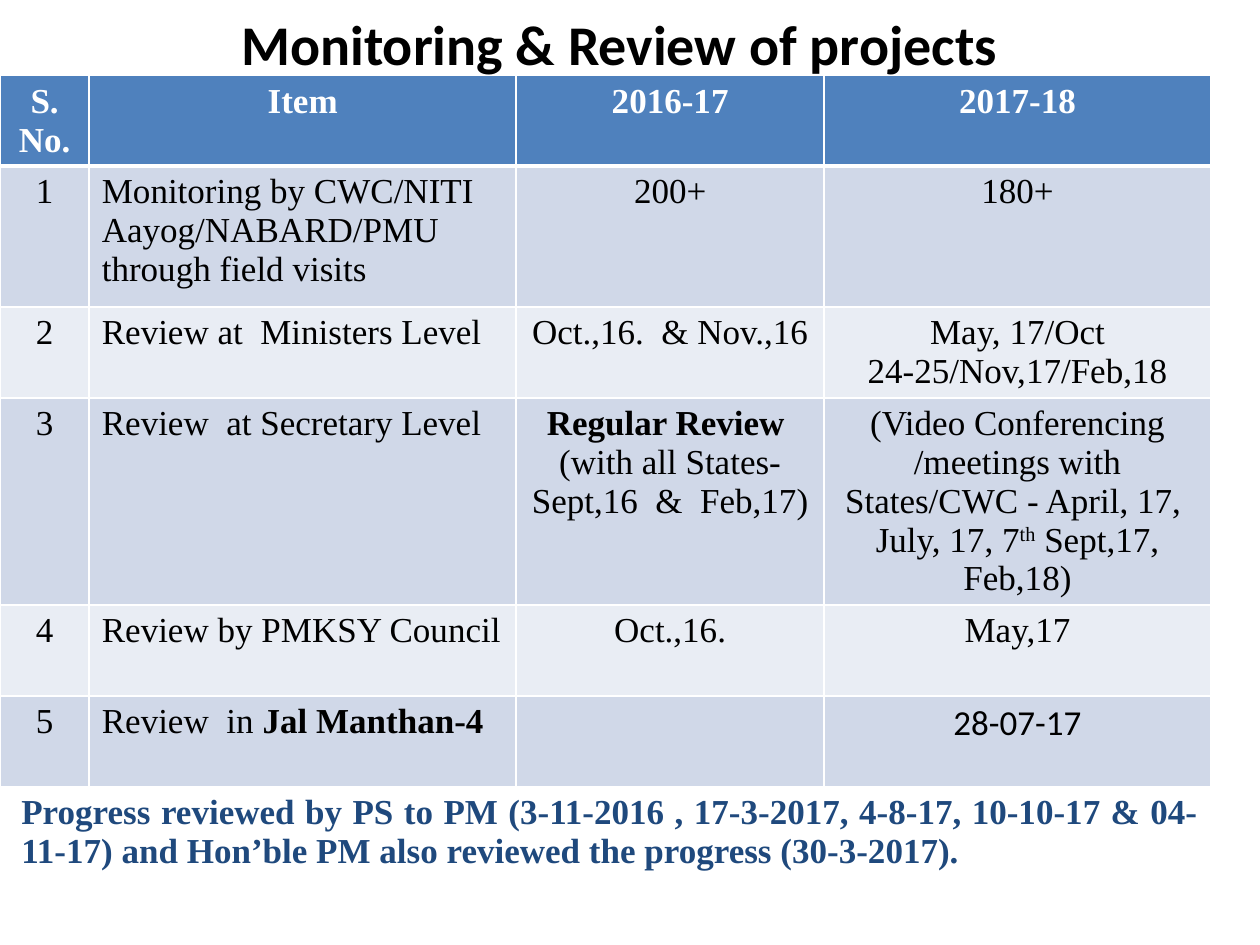
from pptx import Presentation
from pptx.dml.color import RGBColor
from pptx.enum.text import MSO_ANCHOR as Anchor, MSO_AUTO_SIZE as AutoSize, PP_ALIGN as Align
from pptx.oxml.ns import qn
from pptx.util import Pt
from lxml.etree import SubElement

BLACK = RGBColor(0, 0, 0)
WHITE = RGBColor(255, 255, 255)
HEADER_BLUE = RGBColor(0x4F, 0x81, 0xBD)
BAND_DARK = RGBColor(0xD0, 0xD8, 0xE8)
BAND_LIGHT = RGBColor(0xE9, 0xED, 0xF4)
NAVY = RGBColor(0x1F, 0x49, 0x7D)
SERIF = "Times New Roman"
SANS = "Calibri"

COLUMN_WIDTHS = [51, 244, 176, 221]
ROW_HEIGHTS = [44, 80.6, 52, 96.5, 52, 52, 54.7]
HEADERS = ["S. No.", "Item", "2016-17", "2017-18"]
REVIEWS = [
    ["1", "Monitoring by CWC/NITI Aayog/NABARD/PMU through field visits", "200+", "180+"],
    ["2", "Review at  Ministers Level", "Oct.,16.  & Nov.,16", "May, 17/Oct 24-25/Nov,17/Feb,18"],
    ["3", "Review  at Secretary Level",
     [[("Regular Review ", "bold")], [("(with all States-Sept,16  &  Feb,17)", "")]],
     [[("(Video Conferencing /meetings with States/CWC - April, 17,  July, 17, 7", ""),
       ("th", "superscript"), (" Sept,17, Feb,18)", "")]]],
    ["4", "Review by PMKSY Council", "Oct.,16.", "May,17"],
    ["5", [[("Review  in ", ""), ("Jal Manthan-4", "bold")]], "", [[("28-07-17", "sans")]]],
]
PROGRESS = ("Progress reviewed by PS to PM (3-11-2016 , 17-3-2017, 4-8-17, 10-10-17 & 04-11-17) "
            "and Hon’ble PM also reviewed the progress (30-3-2017).")


def format_font(font, size, name, color, bold):
    font.size = Pt(size)
    font.name = name
    font.color.rgb = color
    font.bold = bold


def add_title(slide, text):
    title = slide.shapes.title
    title.left, title.top, title.width, title.height = Pt(48), Pt(0), Pt(612), Pt(43.2)
    frame = title.text_frame
    frame.text = text
    frame.auto_size = AutoSize.NONE
    frame.vertical_anchor = Anchor.TOP
    frame.margin_top, frame.margin_bottom = Pt(5.5), Pt(0)
    paragraph = frame.paragraphs[0]
    paragraph.alignment = Align.CENTER
    format_font(paragraph.runs[0].font, 32, SANS, BLACK, True)


def set_borders(cell, bottom_width):
    properties = cell._tc.get_or_add_tcPr()
    for side, width in (("L", 1), ("R", 1), ("T", 1), ("B", bottom_width)):
        line = SubElement(properties, qn(f"a:ln{side}"), w=str(Pt(width)))
        fill = SubElement(line, qn("a:solidFill"))
        SubElement(fill, qn("a:srgbClr"), val=str(WHITE))


def fill_cell(cell, content, fill, color=BLACK, bold=False, alignment=Align.CENTER, bottom_width=1):
    set_borders(cell, bottom_width)
    cell.fill.solid()
    cell.fill.fore_color.rgb = fill
    paragraphs = [[(content, "")]] if isinstance(content, str) else content
    frame = cell.text_frame
    for index, pieces in enumerate(paragraphs):
        paragraph = frame.paragraphs[0] if index == 0 else frame.add_paragraph()
        paragraph.alignment = alignment
        format_font(paragraph.font, 20, SERIF, color, bold)
        for text, style in pieces:
            if not text:
                continue
            run = paragraph.add_run()
            run.text = text
            name = SANS if style == "sans" else SERIF
            format_font(run.font, 20, name, color, bold or style == "bold")
            if style == "superscript":
                run._r.get_or_add_rPr().set("baseline", "30000")


def add_review_table(slide):
    rows, columns = len(ROW_HEIGHTS), len(COLUMN_WIDTHS)
    table = slide.shapes.add_table(rows, columns, Pt(0), Pt(43.2),
                                   Pt(sum(COLUMN_WIDTHS)), Pt(sum(ROW_HEIGHTS))).table
    for column, width in zip(table.columns, COLUMN_WIDTHS):
        column.width = Pt(width)
    for row, height in zip(table.rows, ROW_HEIGHTS):
        row.height = Pt(height)

    for column, header in enumerate(HEADERS):
        fill_cell(table.cell(0, column), header, HEADER_BLUE, WHITE, True, bottom_width=3)
    for row, review in enumerate(REVIEWS, 1):
        fill = BAND_DARK if row % 2 else BAND_LIGHT
        for column, content in enumerate(review):
            alignment = Align.LEFT if column == 1 else Align.CENTER
            fill_cell(table.cell(row, column), content, fill, alignment=alignment)
    table.cell(3, 3).vertical_anchor = Anchor.MIDDLE

    progress = table.cell(rows - 1, 0)
    progress.merge(table.cell(rows - 1, columns - 1))
    fill_cell(progress, PROGRESS, WHITE, NAVY, True, Align.JUSTIFY)
    paragraph_properties = progress.text_frame.paragraphs[0]._p.get_or_add_pPr()
    paragraph_properties.set("marL", str(Pt(5)))
    paragraph_properties.set("indent", "0")


def main():
    presentation = Presentation()
    presentation.slide_width, presentation.slide_height = Pt(720), Pt(540)
    slide = presentation.slides.add_slide(presentation.slide_layouts[5])
    add_title(slide, "Monitoring & Review of projects")
    add_review_table(slide)
    presentation.save("out.pptx")


if __name__ == "__main__":
    main()
